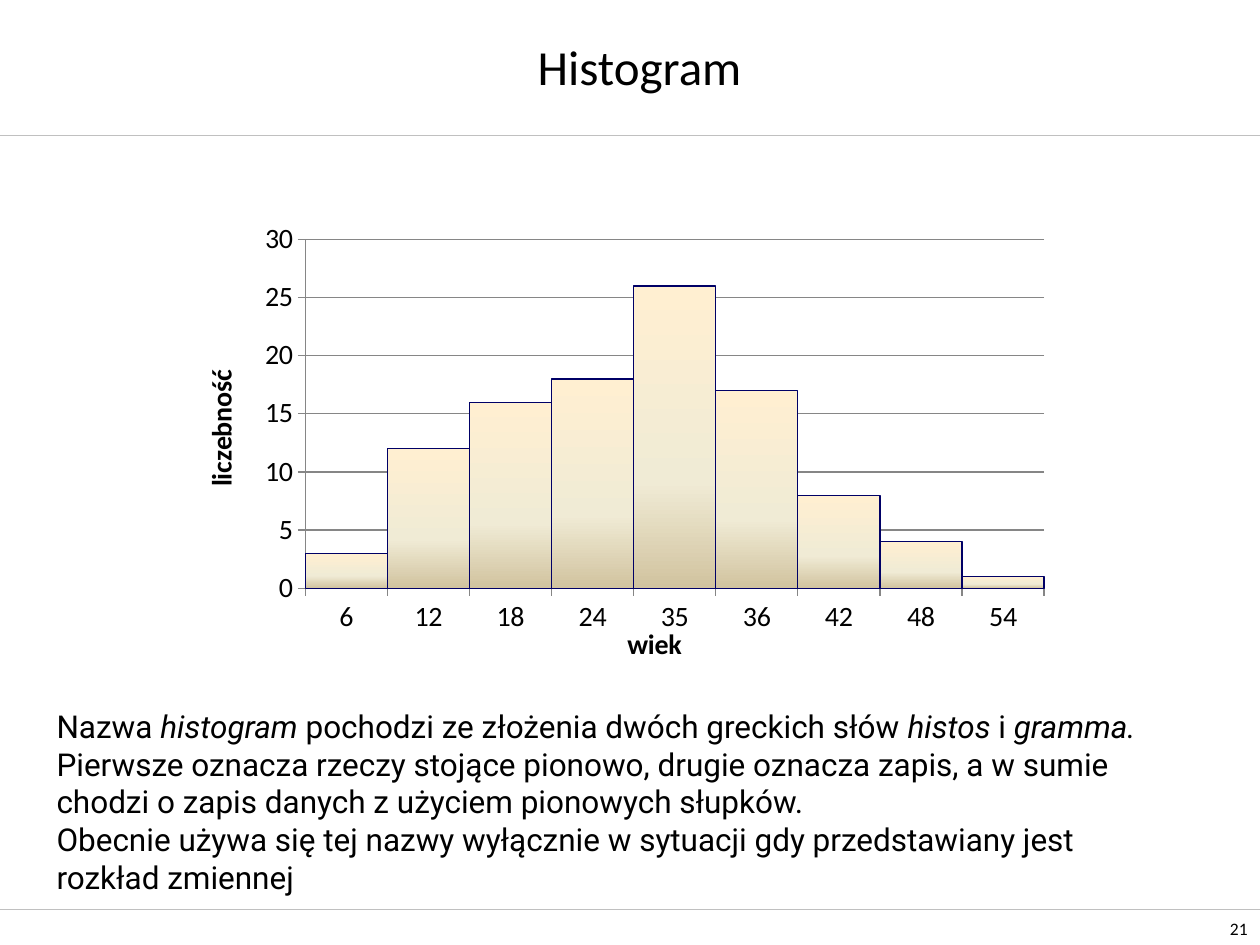
from lxml.etree import SubElement
from pptx import Presentation
from pptx.chart.data import CategoryChartData
from pptx.dml.color import RGBColor as RGB
from pptx.enum.chart import XL_CHART_TYPE as ChartType, XL_TICK_MARK as Tick
from pptx.enum.text import MSO_ANCHOR as Anchor, PP_ALIGN as Align
from pptx.oxml import parse_xml
from pptx.oxml.ns import nsdecls, qn
from pptx.util import Inches, Pt

WIDTH, HEIGHT = 10, 7.5
COLORS = {"text": "000000", "rule": "C0C0C0", "grid": "868686", "bar_line": "000066"}
BAR_STOPS = [(0, "FFEFD1"), (65, "F0EBD5"), (100, "D1C39F")]
COUNTS = {"6": 3, "12": 12, "18": 16, "24": 18, "35": 26, "36": 17, "42": 8, "48": 4, "54": 1}
PLOT_SHARES = {"x": 0.129, "y": 0.164, "w": 0.856, "h": 0.677}
# Each paragraph is a list of (text, italic)
EXPLANATION = [
    [("Nazwa ", False), ("histogram", True),
     (" pochodzi ze złożenia dwóch greckich słów ", False), ("histos", True),
     (" i ", False), ("gramma. ", True),
     ("Pierwsze oznacza rzeczy stojące pionowo, drugie oznacza zapis, a w sumie "
      "chodzi o zapis danych z użyciem pionowych słupków.", False)],
    [("Obecnie używa się tej nazwy wyłącznie w sytuacji gdy przedstawiany jest "
      "rozkład zmiennej", False)],
]


def color(name):
    return RGB.from_string(COLORS[name])


def inches(box):
    return [Inches(length) for length in box]


def style(font, size, name="Calibri", bold=False):
    font.size, font.name, font.bold = Pt(size), name, bold
    font.color.rgb = color("text")


def add_rule(slide, top):
    rule = slide.shapes.add_connector(1, *inches((0, top, WIDTH, top)))
    rule.line.color.rgb = color("rule")
    rule.line.width = Pt(0.25)
    SubElement(rule._element.spPr, qn("a:effectLst"))


def add_page_number(slide, box, number):
    frame = slide.shapes.add_textbox(*inches(box)).text_frame
    frame.word_wrap = True
    frame.vertical_anchor = Anchor.BOTTOM
    frame.text = number
    frame.paragraphs[0].alignment = Align.RIGHT
    style(frame.paragraphs[0].runs[0].font, 10)


def set_title(slide, box, text):
    title = slide.shapes.title
    title.left, title.top, title.width, title.height = inches(box)
    frame = title.text_frame
    frame.text = text
    frame.vertical_anchor = Anchor.MIDDLE
    frame.paragraphs[0].alignment = Align.CENTER
    style(frame.paragraphs[0].runs[0].font, 28)


def format_axis(axis, title):
    axis.has_title = True
    axis.axis_title.text_frame.text = title
    style(axis.axis_title.text_frame.paragraphs[0].runs[0].font, 16, bold=True)
    style(axis.tick_labels.font, 16)
    axis.major_tick_mark = Tick.OUTSIDE
    axis.minor_tick_mark = Tick.NONE
    axis.format.line.color.rgb = color("grid")
    axis.format.line.width = Pt(0.75)


def add_histogram(slide, box):
    counts = CategoryChartData()
    counts.categories = list(COUNTS)
    counts.add_series("Series 1", COUNTS.values())
    chart = slide.shapes.add_chart(ChartType.COLUMN_CLUSTERED, *inches(box), counts).chart
    chart.has_legend = chart.has_title = False
    style(chart.font, 16)

    # Axes
    format_axis(chart.category_axis, "wiek")
    ages, frequency = chart.category_axis, chart.value_axis
    ages.has_major_gridlines = False
    format_axis(frequency, "liczebność")
    frequency.minimum_scale, frequency.maximum_scale, frequency.major_unit = 0, 30, 5
    frequency.has_major_gridlines = True
    frequency.major_gridlines.format.line.color.rgb = color("grid")
    frequency.major_gridlines.format.line.width = Pt(0.75)

    # Touching bars with a top-to-bottom gradient
    plot = chart.plots[0]
    plot.gap_width, plot.vary_by_categories = 0, False
    bars = plot.series[0]
    bars.format.line.color.rgb = color("bar_line")
    bars.format.line.width = Pt(0.75)
    stops = "".join(f'<a:gs pos="{share * 1000}"><a:srgbClr val="{tint}"/></a:gs>'
                    for share, tint in BAR_STOPS)
    bars._element.get_or_add_spPr().insert(0, parse_xml(
        f'<a:gradFill {nsdecls("a")} rotWithShape="1"><a:gsLst>{stops}</a:gsLst>'
        '<a:lin ang="5400000" scaled="0"/></a:gradFill>'))

    # Fixed inner plot area
    area = chart._chartSpace.chart.plotArea
    for old in area.findall(qn("c:layout")):
        area.remove(old)
    modes = '<c:xMode val="edge"/><c:yMode val="edge"/>'
    shares = "".join(f'<c:{side} val="{share}"/>' for side, share in PLOT_SHARES.items())
    area.insert(0, parse_xml(
        f'<c:layout {nsdecls("c")}><c:manualLayout><c:layoutTarget val="inner"/>'
        f'{modes}{shares}</c:manualLayout></c:layout>'))


def add_explanation(slide, box):
    frame = slide.shapes.add_textbox(*inches(box)).text_frame
    frame.word_wrap = True
    for index, parts in enumerate(EXPLANATION):
        paragraph = frame.add_paragraph() if index else frame.paragraphs[0]
        for text, italic in parts:
            run = paragraph.add_run()
            run.text = text
            style(run.font, 18, "Roboto")
            run.font.italic = italic


def main():
    deck = Presentation()
    deck.slide_width, deck.slide_height = Inches(WIDTH), Inches(HEIGHT)
    slide = deck.slides.add_slide(deck.slide_layouts[5])
    for top in (1.07, 7.22):
        add_rule(slide, top)
    add_page_number(slide, (9.49, 7.22, 0.51, 0.28), "21")
    set_title(slide, (0.98, 0.21, 8.19, 0.63), "Histogram")
    add_histogram(slide, (1.54, 1.23, 6.85, 4.09))
    add_explanation(slide, (0.35, 5.56, 8.82, 1.62))
    deck.save("out.pptx")


if __name__ == "__main__":
    main()
